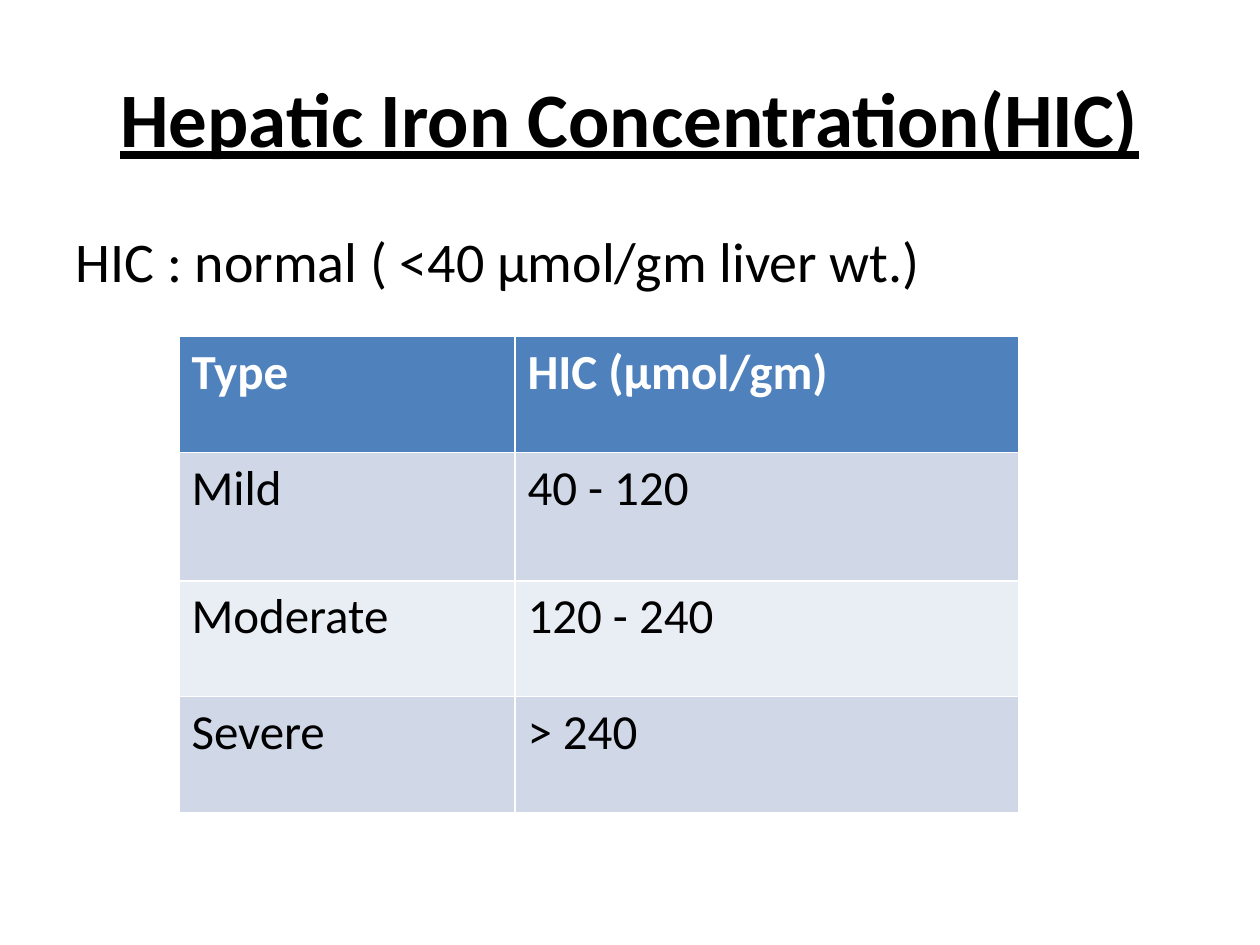
from lxml import etree
from pptx import Presentation
from pptx.dml.color import RGBColor
from pptx.enum.text import MSO_ANCHOR, PP_ALIGN
from pptx.oxml.ns import qn
from pptx.util import Inches, Pt

CENTER = PP_ALIGN.CENTER
LEFT = PP_ALIGN.LEFT
MIDDLE = MSO_ANCHOR.MIDDLE
WIDE, HIGH = Inches(10), Inches(7.5)
FONT = "Calibri"
HEX = {
    "ink": "000000",
    "white": "FFFFFF",
    "head": "4F81BD",
    "odd": "D0D8E8",
    "even": "E9EDF4",
}
ROWS = [
    ("Type", "HIC (µmol/gm)"),
    ("Mild", "40 - 120"),
    ("Moderate", "120 - 240"),
    ("Severe", "> 240"),
]
TALL = [0.92, 1.02, 0.92, 0.92]
SPANS = [2, 3]


def paint(name):
    """Return the named colour."""
    return RGBColor.from_string(HEX[name])


def share(left, top, width, height):
    """Turn shares of the slide into a box."""
    return (round(WIDE * left), round(HIGH * top),
            round(WIDE * width), round(HIGH * height))


def place(shape, box):
    """Move a shape into a box."""
    shape.left, shape.top, shape.width, shape.height = box


def write(frame, text, size, tone="ink", bold=False, align=LEFT):
    """Fill a text frame with one styled paragraph."""
    frame.text = text
    para = frame.paragraphs[0]
    para.alignment = align
    font = para.font
    font.name, font.size, font.bold = FONT, Pt(size), bold
    font.color.rgb = paint(tone)
    return para


def add_title(slide, box):
    """Set the underlined heading."""
    title = slide.shapes.title
    place(title, box)
    title.text_frame.vertical_anchor = MIDDLE
    para = write(title.text_frame, "Hepatic Iron Concentration(HIC)",
                 44, bold=True, align=CENTER)
    para.font.underline = True


def add_body(slide, box):
    """Set the normal range as a line without a bullet."""
    body = slide.placeholders[1]
    place(body, box)
    para = write(body.text_frame, "HIC : normal ( <40 µmol/gm liver wt.)", 32)
    props = para._p.get_or_add_pPr()
    props.set("marL", "0")
    props.set("indent", "0")
    props.insert(0, etree.Element(qn("a:buNone")))


def add_grid(slide, box):
    """Add the table of severity ranges."""
    table = slide.shapes.add_table(len(ROWS), len(SPANS), *box).table
    for col, span in zip(table.columns, SPANS):
        col.width = round(box[2] * span / sum(SPANS))
    for num, (row, tall) in enumerate(zip(table.rows, TALL)):
        row.height = round(box[3] * tall / sum(TALL))
        head = num == 0
        fill = "head" if head else "odd" if num % 2 else "even"
        for cell, text in zip(row.cells, ROWS[num]):
            cell.fill.solid()
            cell.fill.fore_color.rgb = paint(fill)
            write(cell.text_frame, text, 28,
                  "white" if head else "ink", head)


def main():
    """Build and save the slide."""
    deck = Presentation()
    deck.slide_width, deck.slide_height = WIDE, HIGH
    slide = deck.slides.add_slide(deck.slide_layouts[1])
    add_title(slide, share(0.05, 0.04, 0.9, 1 / 6))
    add_body(slide, share(0.05, 7 / 30, 0.9, 0.66))
    add_grid(slide, share(0.142, 0.356, 2 / 3, 0.504))
    deck.save("out.pptx")


if __name__ == "__main__":
    main()
